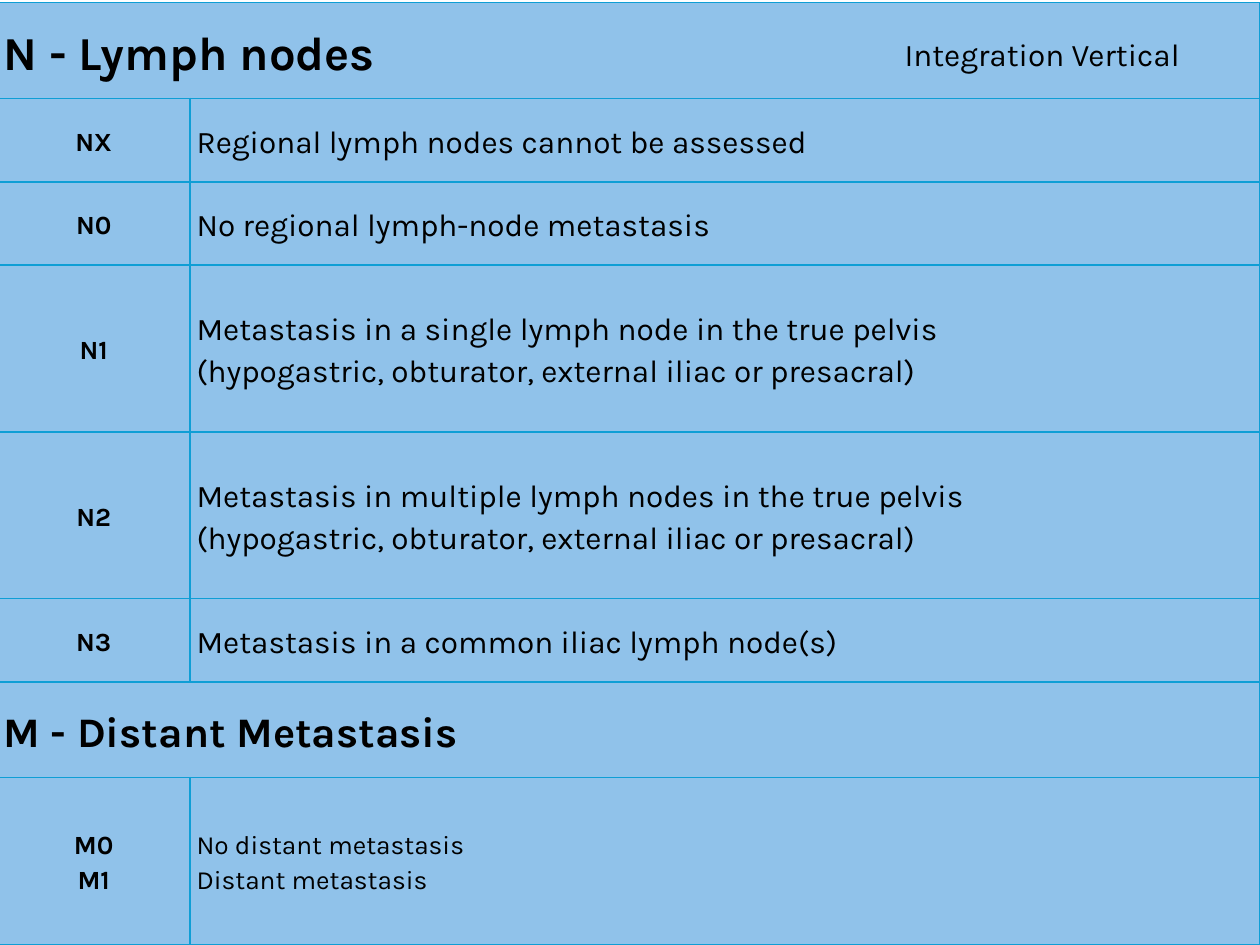
from lxml.etree import SubElement
from pptx import Presentation
from pptx.dml.color import RGBColor
from pptx.enum.text import MSO_ANCHOR, PP_ALIGN
from pptx.oxml.ns import qn
from pptx.util import Pt

SKY = RGBColor(0x90, 0xC2, 0xEA)
BORDER = RGBColor(0x0F, 0x9E, 0xD5)
BLACK = RGBColor(0, 0, 0)

COLUMN_WIDTHS = [110.3, 611.4]
SINGLE, DOUBLE, HEADING = 47.7, 95.2, 54.8
PELVIS_SITES = "(hypogastric, obturator, external iliac or presacral)"

# Height, text size of the last column, then the lines of each cell;
# a row with one cell is a heading across both columns.
ROWS = [
    (HEADING, 27, [["N - Lymph nodes"]]),
    (SINGLE, 18, [["NX"], ["Regional lymph nodes cannot be assessed"]]),
    (SINGLE, 18, [["N0"], ["No regional lymph-node metastasis"]]),
    (DOUBLE, 18, [["N1"], ["Metastasis in a single lymph node in the true pelvis", PELVIS_SITES]]),
    (DOUBLE, 18, [["N2"], ["Metastasis in multiple lymph nodes in the true pelvis", PELVIS_SITES]]),
    (SINGLE, 18, [["N3"], ["Metastasis in a common iliac lymph node(s)"]]),
    (HEADING, 24, [["M - Distant Metastasis"]]),
    (DOUBLE, 15, [["M0", "M1"], ["No distant metastasis", "Distant metastasis"]]),
]


def write_lines(frame, lines, size, bold=False, align=PP_ALIGN.LEFT, spacing=None):
    for index, line in enumerate(lines):
        para = frame.paragraphs[0] if index == 0 else frame.add_paragraph()
        para.alignment = align
        para.line_spacing = spacing
        span = para.add_run()
        span.text = line
        span.font.name = "Karla"
        span.font.size = Pt(size)
        span.font.bold = bold
        span.font.color.rgb = BLACK


def style_cell(cell):
    """Set margins, borders and fill; borders must precede the fill in the XML."""
    cell.vertical_anchor = MSO_ANCHOR.MIDDLE
    cell.margin_left = cell.margin_right = Pt(3.6)
    cell.margin_top = cell.margin_bottom = 0
    properties = cell._tc.get_or_add_tcPr()
    for side in ("a:lnL", "a:lnR", "a:lnT", "a:lnB"):
        line = SubElement(properties, qn(side), w=str(Pt(1)))
        fill = SubElement(line, qn("a:solidFill"))
        SubElement(fill, qn("a:srgbClr"), val=str(BORDER))
    cell.fill.solid()
    cell.fill.fore_color.rgb = SKY


deck = Presentation()
deck.slide_width, deck.slide_height = Pt(720), Pt(540)
page = deck.slides.add_slide(deck.slide_layouts[6])

total_height = sum(height for height, _, _ in ROWS)
table = page.shapes.add_table(
    len(ROWS), 2, Pt(-1.6), Pt(1.4), Pt(sum(COLUMN_WIDTHS)), Pt(total_height)
).table
table.first_row = table.horz_banding = False
for column, width in zip(table.columns, COLUMN_WIDTHS):
    column.width = Pt(width)

for row_index, (height, size, texts) in enumerate(ROWS):
    table.rows[row_index].height = Pt(height)
    cells = [table.cell(row_index, column) for column in range(2)]
    for cell in cells:
        style_cell(cell)
    if len(texts) == 1:
        cells[0].merge(cells[1])
        write_lines(cells[0].text_frame, texts[0], size, bold=True, spacing=1.15)
    else:
        stage, meaning = texts
        write_lines(cells[0].text_frame, stage, 15, True, PP_ALIGN.CENTER, 1.15)
        write_lines(cells[1].text_frame, meaning, size, spacing=1.15)

box = page.shapes.add_textbox(Pt(509.8), Pt(16.6), Pt(210.2), Pt(28.8))
box.text_frame.word_wrap = True
write_lines(box.text_frame, ["Integration Vertical"], 18)

deck.save("out.pptx")
